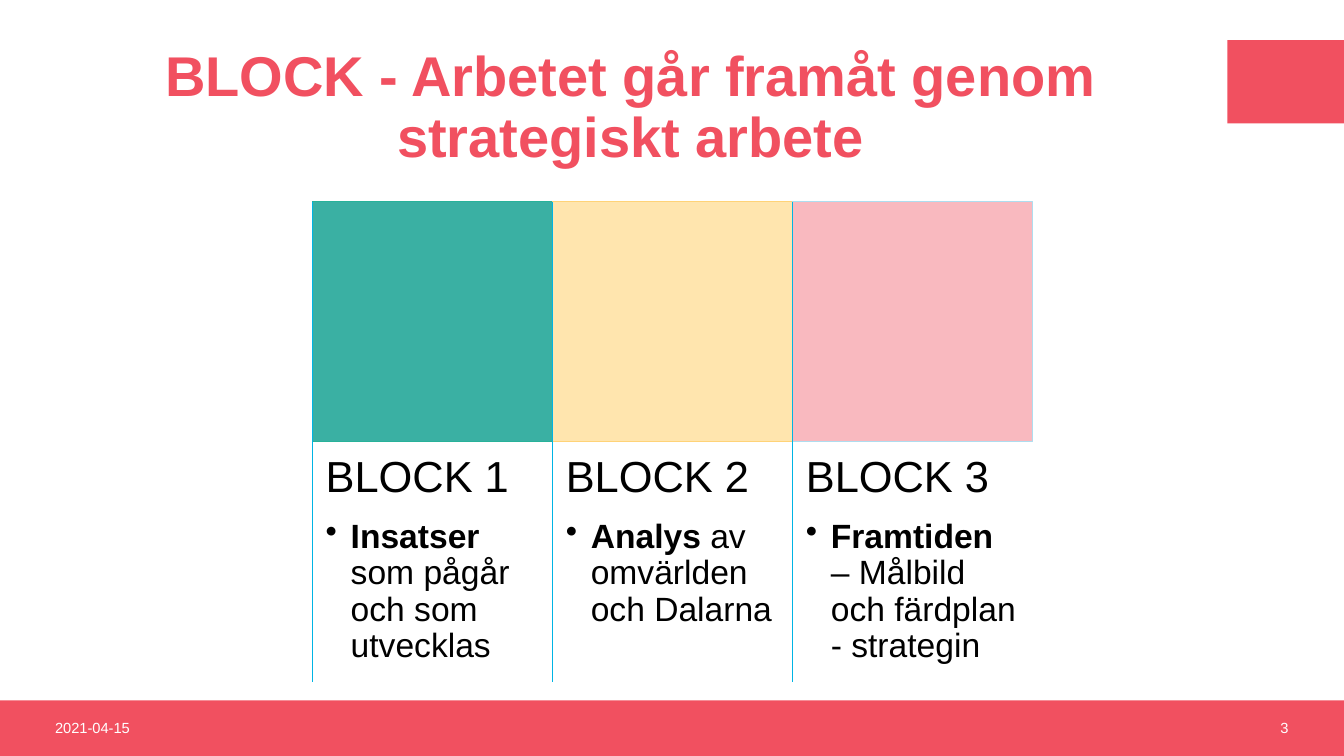
from dataclasses import dataclass

from lxml import etree
from pptx import Presentation
from pptx.dml.color import RGBColor
from pptx.enum.shapes import MSO_CONNECTOR, MSO_SHAPE
from pptx.enum.text import MSO_ANCHOR, MSO_AUTO_SIZE, PP_ALIGN
from pptx.oxml.ns import qn
from pptx.slide import Slide
from pptx.text.text import TextFrame, _Paragraph
from pptx.util import Cm, Pt

RECTANGLE = MSO_SHAPE.RECTANGLE
STRAIGHT = MSO_CONNECTOR.STRAIGHT
MIDDLE = MSO_ANCHOR.MIDDLE
TOP = MSO_ANCHOR.TOP
NO_FIT = MSO_AUTO_SIZE.NONE
LEFT = PP_ALIGN.LEFT
CENTER = PP_ALIGN.CENTER
RIGHT = PP_ALIGN.RIGHT

CORAL = RGBColor(0xF1, 0x50, 0x60)
TEAL = RGBColor(0x3A, 0xB0, 0xA3)
TEAL_EDGE = RGBColor(0x28, 0xB2, 0x9A)
CREAM = RGBColor(0xFF, 0xE5, 0xAE)
CREAM_EDGE = RGBColor(0xFF, 0xD3, 0x78)
PINK = RGBColor(0xF9, 0xB9, 0xBF)
PINK_EDGE = RGBColor(0xAE, 0xDD, 0xEF)
CYAN = RGBColor(0x00, 0xB4, 0xE4)
BLACK = RGBColor(0, 0, 0)
WHITE = RGBColor(0xFF, 0xFF, 0xFF)

FONT = "Arial"
BLOCKS_LEFT = 7.87
BLOCKS_TOP = 5.08
BLOCK_SIDE = 6.05
FOOTER_TOP = 17.65


@dataclass
class Block:
    heading: str
    keyword: str
    detail: str
    fill: RGBColor
    edge: RGBColor


@dataclass
class Band:
    left: float
    top: float
    width: float
    height: float


@dataclass
class FooterText:
    text: str
    left: float
    align: PP_ALIGN


BLOCKS = [
    Block("BLOCK 1", "Insatser", " som pågår och som utvecklas", TEAL, TEAL_EDGE),
    Block("BLOCK 2", "Analys", " av omvärlden och Dalarna", CREAM, CREAM_EDGE),
    Block("BLOCK 3", "Framtiden", " – Målbild och färdplan - strategin", PINK, PINK_EDGE),
]
BANDS = [Band(0, FOOTER_TOP, 33.87, 1.4), Band(30.93, 1.01, 2.94, 2.1)]
FOOTER_TEXTS = [FooterText("2021-04-15", 1.14, LEFT), FooterText("3", 25.1, RIGHT)]


def set_font(paragraph: _Paragraph, size: float, color: RGBColor) -> None:
    paragraph.font.name = FONT
    paragraph.font.size = Pt(size)
    paragraph.font.color.rgb = color


def add_rectangle(slide: Slide, area: Band, fill: RGBColor, edge: RGBColor | None = None) -> None:
    rectangle = slide.shapes.add_shape(
        RECTANGLE, Cm(area.left), Cm(area.top), Cm(area.width), Cm(area.height))
    rectangle.shadow.inherit = False
    rectangle.fill.solid()
    rectangle.fill.fore_color.rgb = fill
    if edge is None:
        rectangle.line.fill.background()
    else:
        rectangle.line.color.rgb = edge
        rectangle.line.width = Pt(1)


def add_text_frame(slide: Slide, area: Band, anchor: MSO_ANCHOR) -> TextFrame:
    frame = slide.shapes.add_textbox(
        Cm(area.left), Cm(area.top), Cm(area.width), Cm(area.height)).text_frame
    frame.word_wrap = True
    frame.vertical_anchor = anchor
    return frame


def add_title(slide: Slide) -> None:
    title = slide.shapes.title
    title.left, title.top = Cm(1.14), Cm(1.07)
    title.width, title.height = Cm(29.49), Cm(3.35)
    frame = title.text_frame
    frame.text = "BLOCK - Arbetet går framåt genom strategiskt arbete"
    frame.word_wrap = True
    frame.auto_size = NO_FIT
    frame.vertical_anchor = MIDDLE
    paragraph = frame.paragraphs[0]
    paragraph.alignment = CENTER
    paragraph.line_spacing = 0.9
    set_font(paragraph, 40, CORAL)
    paragraph.font.bold = True


def add_divider(slide: Slide, left: float) -> None:
    divider = slide.shapes.add_connector(
        STRAIGHT, Cm(left), Cm(BLOCKS_TOP), Cm(left), Cm(BLOCKS_TOP + 2 * BLOCK_SIDE))
    divider.line.color.rgb = CYAN
    divider.line.width = Pt(1)
    etree.SubElement(divider._element.spPr, qn("a:effectLst"))


def add_bullet(paragraph: _Paragraph) -> None:
    properties = paragraph._p.get_or_add_pPr()
    properties.set("marL", str(Cm(0.63)))
    properties.set("indent", str(-Cm(0.63)))
    etree.SubElement(properties, qn("a:buChar")).set("char", "•")


def add_block(slide: Slide, block: Block, left: float) -> None:
    add_rectangle(slide, Band(left, BLOCKS_TOP, BLOCK_SIDE, BLOCK_SIDE), block.fill, block.edge)
    add_divider(slide, left)

    frame = add_text_frame(
        slide, Band(left, BLOCKS_TOP + BLOCK_SIDE, BLOCK_SIDE, BLOCK_SIDE), TOP)
    frame.margin_left = frame.margin_right = Cm(0.34)
    frame.margin_top = frame.margin_bottom = Cm(0.34)

    heading = frame.paragraphs[0]
    heading.text = block.heading
    heading.line_spacing = 0.9
    heading.space_after = Pt(12.5)
    set_font(heading, 31, BLACK)

    description = frame.add_paragraph()
    description.level = 1
    description.line_spacing = 0.9
    add_bullet(description)
    set_font(description, 24, BLACK)
    keyword = description.add_run()
    keyword.text = block.keyword
    keyword.font.bold = True
    description.add_run().text = block.detail


def add_footer_text(slide: Slide, footer: FooterText) -> None:
    frame = add_text_frame(slide, Band(footer.left, FOOTER_TOP, 7.62, 1.37), MIDDLE)
    paragraph = frame.paragraphs[0]
    paragraph.text = footer.text
    paragraph.alignment = footer.align
    set_font(paragraph, 10.5, WHITE)


def main() -> None:
    presentation = Presentation()
    presentation.slide_width = Cm(33.87)
    presentation.slide_height = Cm(19.05)
    slide = presentation.slides.add_slide(presentation.slide_layouts[5])

    for band in BANDS:
        add_rectangle(slide, band, CORAL)
    add_title(slide)
    for index, block in enumerate(BLOCKS):
        add_block(slide, block, BLOCKS_LEFT + index * BLOCK_SIDE)
    for footer in FOOTER_TEXTS:
        add_footer_text(slide, footer)

    presentation.save("out.pptx")


if __name__ == "__main__":
    main()
